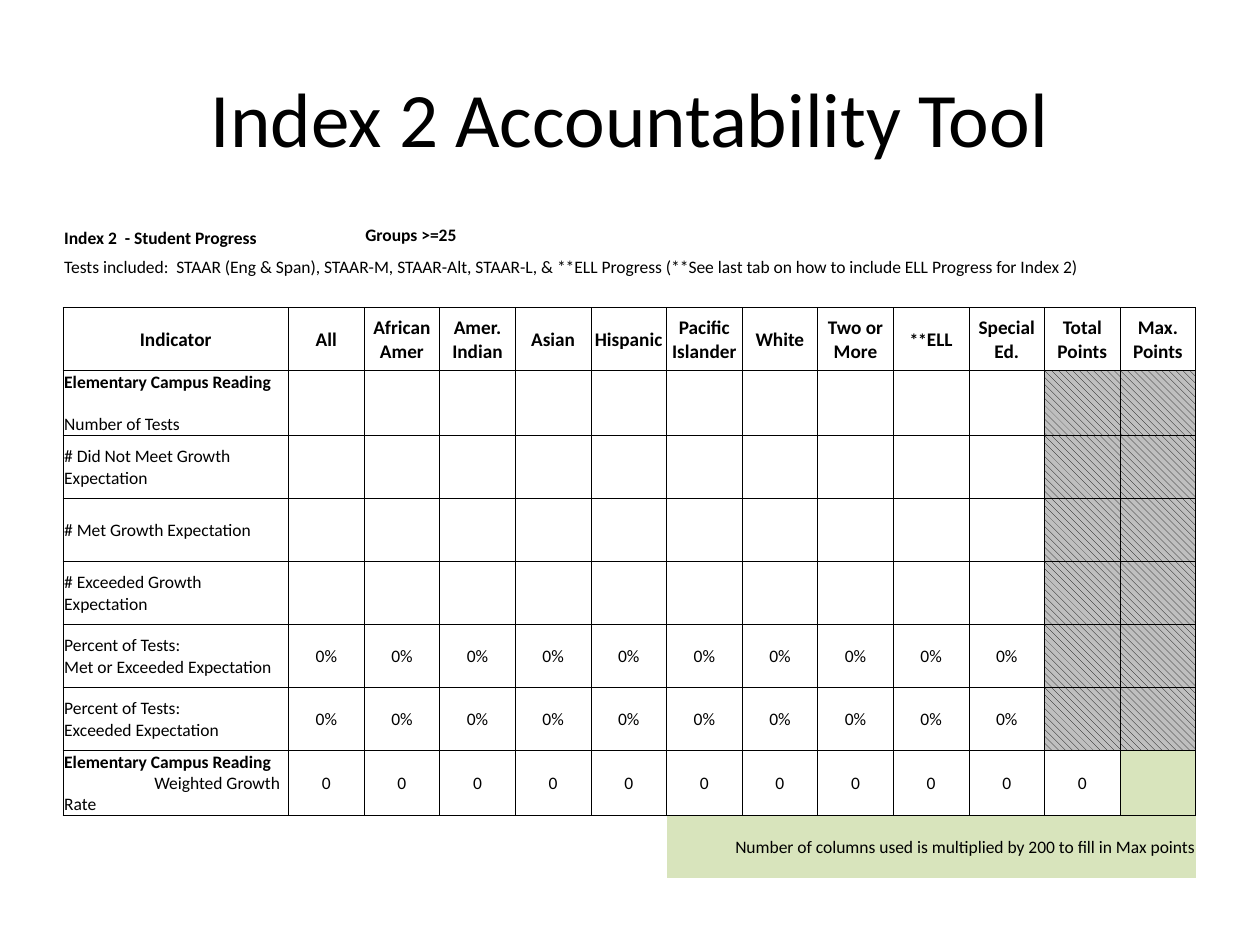
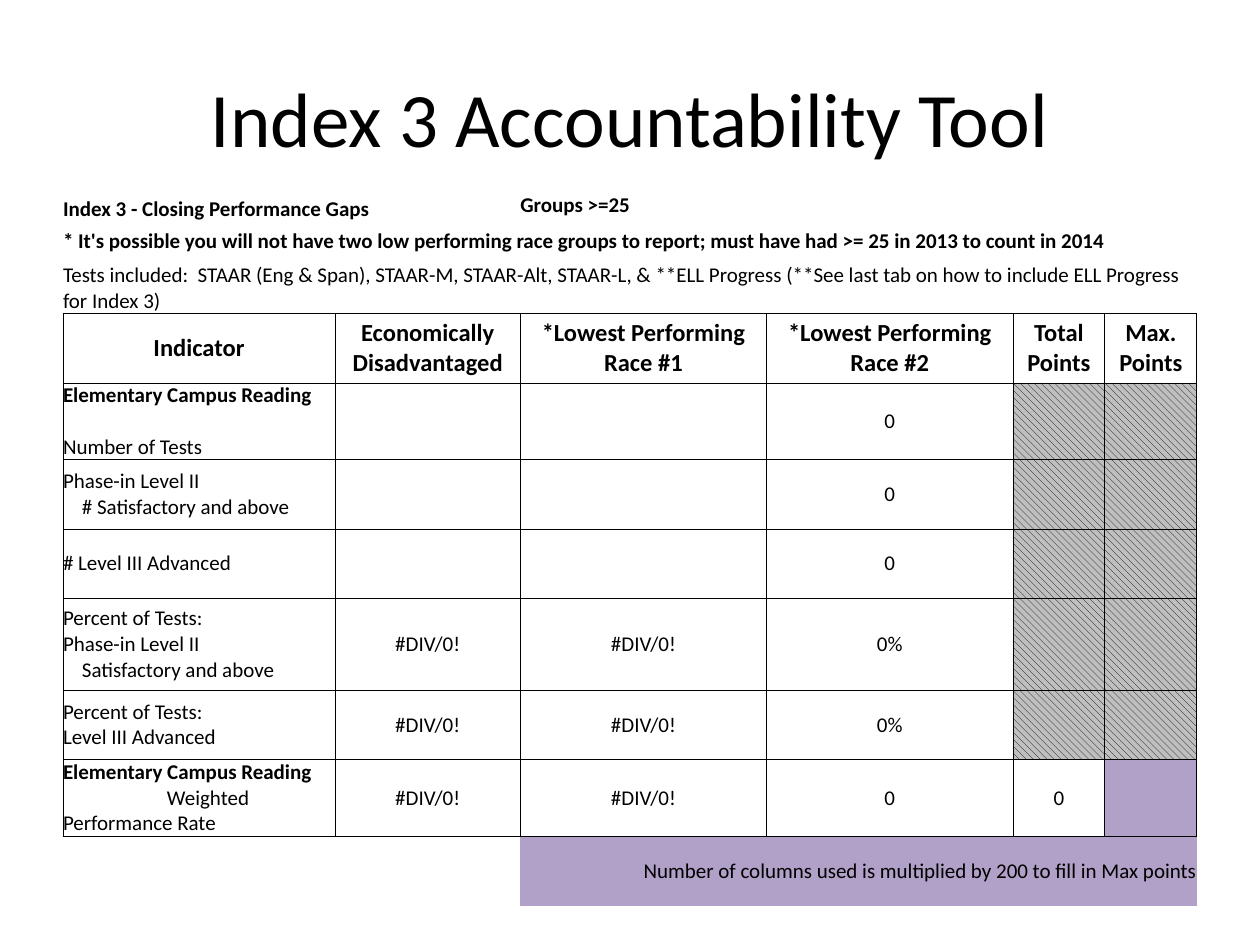
from dataclasses import dataclass

import lxml.etree
import pptx
import pptx.dml.color
import pptx.enum.dml
import pptx.enum.text
import pptx.oxml.ns
import pptx.util

PX_PER_INCH = 200
LEFT, MIDDLE, RIGHT = (pptx.enum.text.PP_ALIGN.LEFT, pptx.enum.text.PP_ALIGN.CENTER,
                       pptx.enum.text.PP_ALIGN.RIGHT)
BOTTOM_ANCHOR = pptx.enum.text.MSO_ANCHOR.BOTTOM
MIDDLE_ANCHOR = pptx.enum.text.MSO_ANCHOR.MIDDLE


@dataclass(frozen=True)
class Theme:
    font: str = "Calibri"
    ink: str = "000000"
    hatch: str = "BFBFBF"
    green: str = "D8E4BC"
    purple: str = "B1A0C7"
    title_size: int = 44
    border_width: float = 0.5
    line_height: float = 1.22
    plain_table_style: str = "{2D5ABB26-0587-4C30-8999-92F81FD0307C}"


THEME = Theme()


@dataclass(frozen=True)
class Line:
    text: str
    bold: bool = False
    indent: int = 0
    lines_after: int = 0


@dataclass(frozen=True)
class Lead:
    row: int
    column: int
    span: int
    line: Line
    anchor: pptx.enum.text.MSO_ANCHOR = BOTTOM_ANCHOR


@dataclass(frozen=True)
class Indicator:
    label: tuple[Line, ...]
    values: tuple[str, ...]
    height: int


@dataclass(frozen=True)
class Tool:
    title: str
    top: int
    columns: tuple[int, ...]
    lead_heights: tuple[int, ...]
    row_height: int
    leads: tuple[Lead, ...]
    headers: tuple[str, ...]
    indicators: tuple[Indicator, ...]
    accent: str
    note_column: int
    body_size: int
    header_size: int
    margin: int


def px(length: int) -> int:
    return round(length * 914400 / PX_PER_INCH)


def rgb(code: str) -> pptx.dml.color.RGBColor:
    return pptx.dml.color.RGBColor.from_string(code)


def style_font(font, size: int, bold: bool = False) -> None:
    font.name = THEME.font
    font.size = pptx.util.Pt(size)
    font.bold = bold
    font.color.rgb = rgb(THEME.ink)


def write_lines(cell, lines: tuple[Line, ...], size: int, align=LEFT) -> None:
    frame = cell.text_frame
    for index, line in enumerate(lines):
        para = frame.add_paragraph() if index else frame.paragraphs[0]
        para.alignment = align
        para.space_after = pptx.util.Pt(round(line.lines_after * size * THEME.line_height, 1))
        style_font(para.font, size, line.bold)
        if line.indent:
            para._p.get_or_add_pPr().set("indent", str(px(line.indent)))
        para.add_run().text = line.text


def write_header(cell, text: str, tool: Tool) -> None:
    write_lines(cell, (Line(text, bold=True),), tool.header_size, MIDDLE)
    if text.startswith("**"):
        para = cell.text_frame.paragraphs[0]
        stars = para.runs[0]
        stars.text = "**"
        stars.font.size = pptx.util.Pt(tool.body_size)
        para.add_run().text = text[2:]


def prepare_cell(cell, tool: Tool) -> None:
    cell.margin_left = cell.margin_right = cell.margin_top = px(tool.margin)
    cell.margin_bottom = 0
    cell.vertical_anchor = MIDDLE_ANCHOR
    cell.fill.background()


def set_empty_size(cell, size: int) -> None:
    para = cell.text_frame.paragraphs[0]
    if not para.runs:
        lxml.etree.SubElement(para._p, pptx.oxml.ns.qn("a:endParaRPr"), sz=str(size * 100))


def draw_borders(cell, sides: str) -> None:
    properties = cell._tc.get_or_add_tcPr()
    for position, side in enumerate(sides):
        border = lxml.etree.Element(pptx.oxml.ns.qn(f"a:ln{side}"),
                                    w=str(pptx.util.Pt(THEME.border_width)))
        fill = lxml.etree.SubElement(border, pptx.oxml.ns.qn("a:solidFill"))
        lxml.etree.SubElement(fill, pptx.oxml.ns.qn("a:srgbClr"), val=THEME.ink)
        properties.insert(position, border)


def fill_solid(cell, color: str) -> None:
    cell.fill.solid()
    cell.fill.fore_color.rgb = rgb(color)


def fill_hatched(cell) -> None:
    cell.fill.patterned()
    cell.fill.pattern = pptx.enum.dml.MSO_PATTERN.DOWNWARD_DIAGONAL
    cell.fill.fore_color.rgb = rgb(THEME.ink)
    cell.fill.back_color.rgb = rgb(THEME.hatch)


def add_title(page, text: str) -> None:
    title = page.shapes.title
    title.left, title.top, title.width, title.height = map(px, (100, 60, 1800, 250))
    title.text_frame.text = text
    title.text_frame.vertical_anchor = MIDDLE_ANCHOR
    para = title.text_frame.paragraphs[0]
    para.alignment = MIDDLE
    style_font(para.font, THEME.title_size)


def add_tool_table(page, tool: Tool) -> None:
    heights = (*tool.lead_heights, tool.row_height,
               *(indicator.height for indicator in tool.indicators), tool.row_height)
    header_row, note_row = len(tool.lead_heights), len(heights) - 1
    last_column = len(tool.columns) - 1
    frame = page.shapes.add_table(len(heights), len(tool.columns), px(100), px(tool.top),
                                  px(sum(tool.columns)), px(sum(heights)))
    table = frame.table
    table.first_row = table.horz_banding = False
    table._tbl.tblPr.find(pptx.oxml.ns.qn("a:tableStyleId")).text = THEME.plain_table_style
    for column, width in zip(table.columns, tool.columns):
        column.width = px(width)
    for row, height in zip(table.rows, heights):
        row.height = px(height)
    for cell in table.iter_cells():
        prepare_cell(cell, tool)

    for lead in tool.leads:
        cell = table.cell(lead.row, lead.column)
        if lead.span > 1:
            cell.merge(table.cell(lead.row, lead.column + lead.span - 1))
        cell.vertical_anchor = lead.anchor
        write_lines(cell, (lead.line,), tool.body_size)

    for column, text in enumerate(tool.headers):
        write_header(table.cell(header_row, column), text, tool)

    for row, indicator in enumerate(tool.indicators, header_row + 1):
        write_lines(table.cell(row, 0), indicator.label, tool.body_size)
        for column, value in enumerate(indicator.values, 1):
            if value:
                write_lines(table.cell(row, column), (Line(value),), tool.body_size, MIDDLE)
        if row < note_row - 1:
            for column in (last_column - 1, last_column):
                fill_hatched(table.cell(row, column))
    fill_solid(table.cell(note_row - 1, last_column), tool.accent)

    note = table.cell(note_row, tool.note_column)
    note.merge(table.cell(note_row, last_column))
    fill_solid(note, tool.accent)
    write_lines(note, (Line("Number of columns used is multiplied by 200 to fill in Max points"),),
                tool.body_size, RIGHT)

    edges = {header_row - 1: "B", note_row: "T"}
    edges.update({row: "LRTB" for row in range(header_row, note_row)})
    for row in range(len(heights)):
        for column in range(len(tool.columns)):
            cell = table.cell(row, column)
            draw_borders(cell, edges.get(row, ""))
            set_empty_size(cell, tool.body_size)


def tests_included(index: int) -> Line:
    return Line("Tests included:  STAAR (Eng & Span), STAAR-M, STAAR-Alt, STAAR-L, & **ELL Progress "
                f"(**See last tab on how to include ELL Progress for Index {index})")


READING = "Elementary Campus Reading"
NUMBER_OF_TESTS = (Line(READING, bold=True, lines_after=1), Line("Number of Tests"))
PERCENT = Line("Percent of Tests:")
GROUPS = Line("Groups >=25", bold=True)
POINTS = ("Total Points", "Max. Points")


def growth_row(*label: Line, value: str = "", total: str = "") -> Indicator:
    return Indicator(label, (value,) * 10 + (total,), 100)


def gaps_row(*label: Line, value: str = "", second_race: str = "0", total: str = "",
             height: int = 110) -> Indicator:
    return Indicator(label, (value, value, second_race, total), height)


TOOLS = (
    Tool(
        title="Index 2 Accountability Tool", top=350,
        columns=(358,) + (120,) * 12, lead_heights=(46,) * 3, row_height=100,
        leads=(
            Lead(0, 0, 1, Line("Index 2  - Student Progress", bold=True)),
            Lead(0, 2, 2, GROUPS, MIDDLE_ANCHOR),
            Lead(1, 0, 12, tests_included(2)),
        ),
        headers=("Indicator", "All", "African Amer", "Amer. Indian", "Asian", "Hispanic",
                 "Pacific Islander", "White", "Two or More", "**ELL", "Special Ed.", *POINTS),
        indicators=(
            growth_row(*NUMBER_OF_TESTS),
            growth_row(Line("# Did Not Meet Growth Expectation")),
            growth_row(Line("# Met Growth Expectation")),
            growth_row(Line("# Exceeded Growth Expectation")),
            growth_row(PERCENT, Line("Met or Exceeded Expectation"), value="0%"),
            growth_row(PERCENT, Line("Exceeded Expectation"), value="0%"),
            growth_row(Line(READING, bold=True), Line("Weighted Growth Rate", indent=143),
                       value="0", total="0"),
        ),
        accent=THEME.green, note_column=6, body_size=10, header_size=11, margin=2,
    ),
    Tool(
        title="Index 3 Accountability Tool", top=300,
        columns=(432, 294, 391, 391, 146, 146), lead_heights=(52, 52, 94), row_height=110,
        leads=(
            Lead(0, 0, 2, Line("Index 3 - Closing Performance Gaps", bold=True)),
            Lead(0, 2, 1, GROUPS, MIDDLE_ANCHOR),
            Lead(1, 0, 6, Line("* It's possible you will not have two low performing race groups to "
                               "report; must have had >= 25 in 2013 to count in 2014", bold=True)),
            Lead(2, 0, 6, tests_included(3)),
        ),
        headers=("Indicator", "Economically Disadvantaged", "*Lowest Performing Race #1",
                 "*Lowest Performing Race #2", *POINTS),
        indicators=(
            gaps_row(*NUMBER_OF_TESTS),
            gaps_row(Line("Phase-in Level II"), Line("# Satisfactory and above", indent=30)),
            gaps_row(Line("# Level III Advanced")),
            gaps_row(PERCENT, Line("Phase-in Level II"), Line("Satisfactory and above", indent=30),
                     value="#DIV/0!", second_race="0%", height=146),
            gaps_row(PERCENT, Line("Level III Advanced"), value="#DIV/0!", second_race="0%"),
            gaps_row(Line(READING, bold=True), Line("Weighted Performance Rate", indent=165),
                     value="#DIV/0!", total="0"),
        ),
        accent=THEME.purple, note_column=2, body_size=12, header_size=14, margin=0,
    ),
)


def main() -> None:
    deck = pptx.Presentation()
    deck.slide_width, deck.slide_height = px(2000), px(1500)
    for tool in TOOLS:
        page = deck.slides.add_slide(deck.slide_layouts[5])
        add_title(page, tool.title)
        add_tool_table(page, tool)
    deck.save("out.pptx")


if __name__ == "__main__":
    main()
